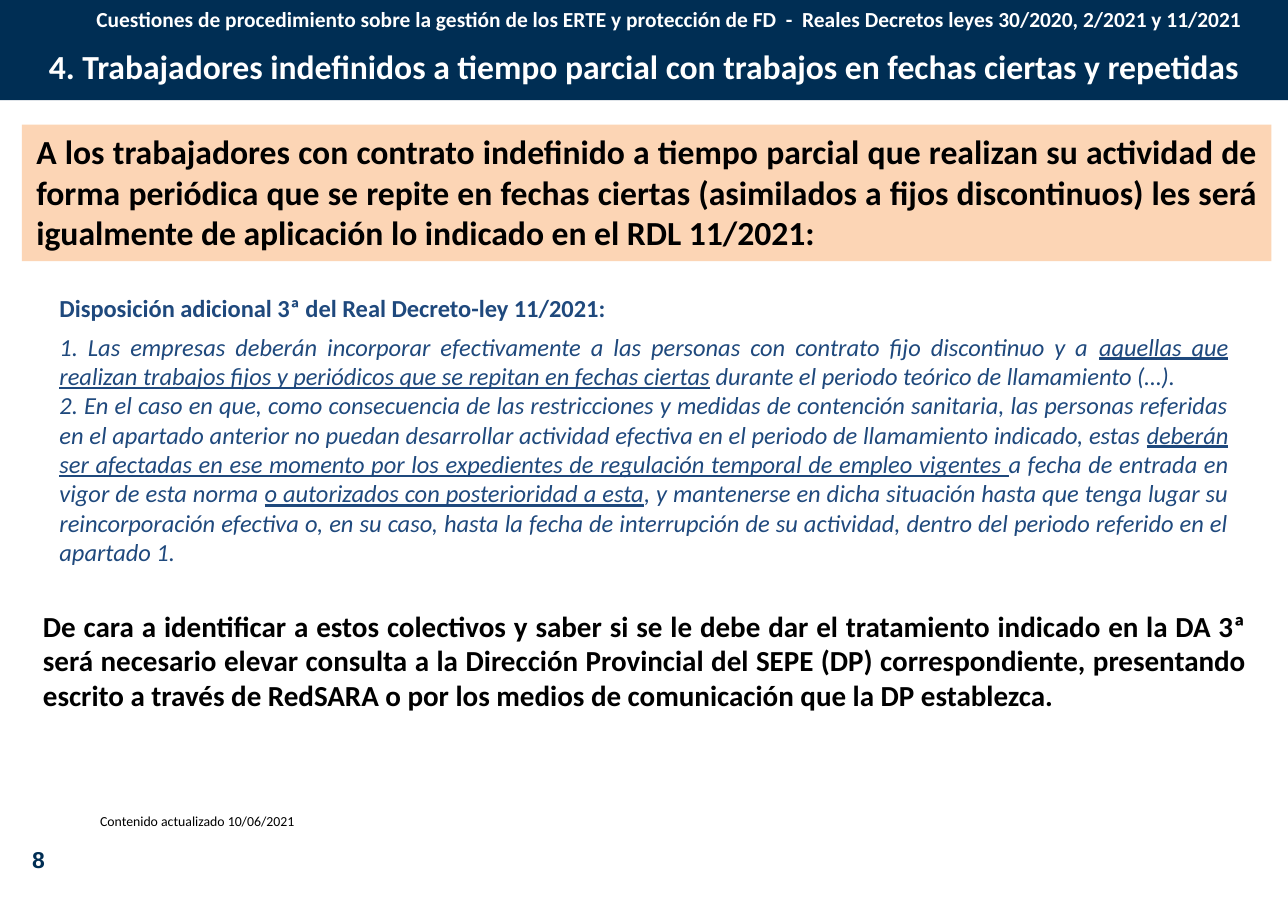
from pptx import Presentation
from pptx.dml.color import RGBColor
from pptx.enum.shapes import MSO_SHAPE
from pptx.enum.text import MSO_ANCHOR, MSO_AUTO_SIZE, PP_ALIGN
from pptx.util import Pt
from lxml import etree

RECT = MSO_SHAPE.RECTANGLE
TOP, MIDDLE = MSO_ANCHOR.TOP, MSO_ANCHOR.MIDDLE
LEFT, CENTER, RIGHT, JUSTIFY = PP_ALIGN.LEFT, PP_ALIGN.CENTER, PP_ALIGN.RIGHT, PP_ALIGN.JUSTIFY
NO_FIT = MSO_AUTO_SIZE.NONE
A_NS = "{http://schemas.openxmlformats.org/drawingml/2006/main}"
WIDTH, HEIGHT = 841.68, 595.44
COLORS = {"navy": "002E54", "blue": "1F497D", "peach": "FCD5B5",
          "white": "FFFFFF", "black": "000000"}

TITLE = "4. Trabajadores indefinidos a tiempo parcial con trabajos en fechas ciertas y repetidas"
HEADER = ("Cuestiones de procedimiento sobre la gestión de los ERTE y protección de FD  -  "
          "Reales Decretos leyes 30/2020, 2/2021 y 11/2021")
INTRO = ("A los trabajadores con contrato indefinido a tiempo parcial que realizan su actividad "
         "de forma periódica que se repite en fechas ciertas (asimilados a fijos discontinuos) "
         "les será igualmente de aplicación lo indicado en el RDL 11/2021: ")
LAW_HEADING = "Disposición adicional 3ª del Real Decreto-ley 11/2021:"
LAW_POINT_1 = [
    ("1. Las empresas deberán incorporar efectivamente a las personas con contrato fijo "
     "discontinuo y a ", False),
    ("aquellas que realizan trabajos fijos y periódicos que se repitan en fechas ciertas", True),
    (" durante el periodo teórico de llamamiento (…).", False),
]
LAW_POINT_2 = [
    ("2. En el caso en que, como consecuencia de las restricciones y medidas de contención "
     "sanitaria, las personas referidas en el apartado anterior no puedan desarrollar actividad "
     "efectiva en el periodo de llamamiento indicado, estas ", False),
    ("deberán ser afectadas en ese momento por los expedientes de regulación temporal de "
     "empleo vigentes ", True),
    ("a fecha de entrada en vigor de esta norma ", False),
    ("o autorizados con posterioridad a esta", True),
    (", y mantenerse en dicha situación hasta que tenga lugar su reincorporación efectiva o, en "
     "su caso, hasta la fecha de interrupción de su actividad, dentro del periodo referido en "
     "el apartado 1.", False),
]
CONCLUSION = ("De cara a identificar a estos colectivos y saber si se le debe dar el tratamiento "
              "indicado en la DA 3ª será necesario elevar consulta a la Dirección Provincial del "
              "SEPE (DP) correspondiente, presentando escrito a través de RedSARA o por los "
              "medios de comunicación que la DP establezca. ")


def rgb(name):
    return RGBColor.from_string(COLORS[name])


def place(sp, left, top, width, height):
    sp.left, sp.top, sp.width, sp.height = Pt(left), Pt(top), Pt(width), Pt(height)


def set_frame(sp, margins=(9.36, 4.32), anchor=TOP):
    tf = sp.text_frame
    tf.word_wrap = True
    tf.auto_size = NO_FIT
    tf.vertical_anchor = anchor
    tf.margin_left = tf.margin_right = Pt(margins[0])
    tf.margin_top = tf.margin_bottom = Pt(margins[1])
    return tf


def write(p, text, size=16, color="black", bold=False, italic=False, underline=False,
          font="Calibri", align=JUSTIFY, before=0):
    p.alignment = align
    p.space_before = Pt(before)
    r = p.add_run()
    r.text = text
    f = r.font
    f.name, f.size = font, Pt(size)
    f.bold, f.italic, f.underline = bold, italic, underline
    f.color.rgb = rgb(color)


def add_rect(s, box, fill):
    sp = s.shapes.add_shape(RECT, *map(Pt, box))
    sp.shadow.inherit = False
    sp.fill.solid()
    sp.fill.fore_color.rgb = rgb(fill)
    sp.line.fill.background()
    return sp


def add_text(s, box, text, margins=(9.36, 4.32), **fmt):
    sp = s.shapes.add_textbox(*map(Pt, box))
    write(set_frame(sp, margins).paragraphs[0], text, **fmt)


def remove_bullet(p):
    pPr = p._p.get_or_add_pPr()
    pPr.set("marL", "0")
    pPr.set("indent", "0")
    etree.SubElement(pPr, A_NS + "buNone")


def fill_title(s):
    banner = add_rect(s, (0, 0, WIDTH, 65.5), "navy")
    s.shapes._spTree.insert(2, banner._element)
    sp = s.shapes.title
    place(sp, 0, 25.7, WIDTH, 35.5)
    write(set_frame(sp).paragraphs[0], TITLE, size=22, color="white", bold=True, align=CENTER)


def fill_law(s):
    sp = s.placeholders[1]
    place(sp, 29.5, 187.2, 782.6, 190)
    tf = set_frame(sp)
    p = tf.paragraphs[0]
    remove_bullet(p)
    write(p, LAW_HEADING, color="blue", bold=True)
    for runs, before in ((LAW_POINT_1, 6), (LAW_POINT_2, 0)):
        p = tf.add_paragraph()
        remove_bullet(p)
        for text, underline in runs:
            write(p, text, color="blue", italic=True, underline=underline, before=before)


def main():
    """Build the slide on part-time workers with fixed, recurring dates."""
    prs = Presentation()
    prs.slide_width, prs.slide_height = Pt(WIDTH), Pt(HEIGHT)
    s = prs.slides.add_slide(prs.slide_layouts[1])
    fill_title(s)
    fill_law(s)
    number = add_rect(s, (0, 545.8, 50.4, 31.7), "white")
    write(set_frame(number, (8.64, 4.32), MIDDLE).paragraphs[0], "8", size=15, color="navy",
          bold=True, font="Arial", align=CENTER)
    intro = add_rect(s, (14.4, 81.4, 816.5, 89.3), "peach")
    write(set_frame(intro).paragraphs[0], INTRO, size=22, bold=True)
    add_text(s, (-20.2, 0, WIDTH, 25.9), HEADER, size=14, color="white", bold=True, align=RIGHT)
    add_text(s, (58.3, 527.8, 164.2, 18), "Contenido actualizado 10/06/2021",
             margins=(7.2, 3.6), size=9, align=LEFT)
    add_text(s, (18.7, 393.1, 805, 78.5), CONCLUSION, size=19, bold=True)
    prs.save("out.pptx")


if __name__ == "__main__":
    main()
